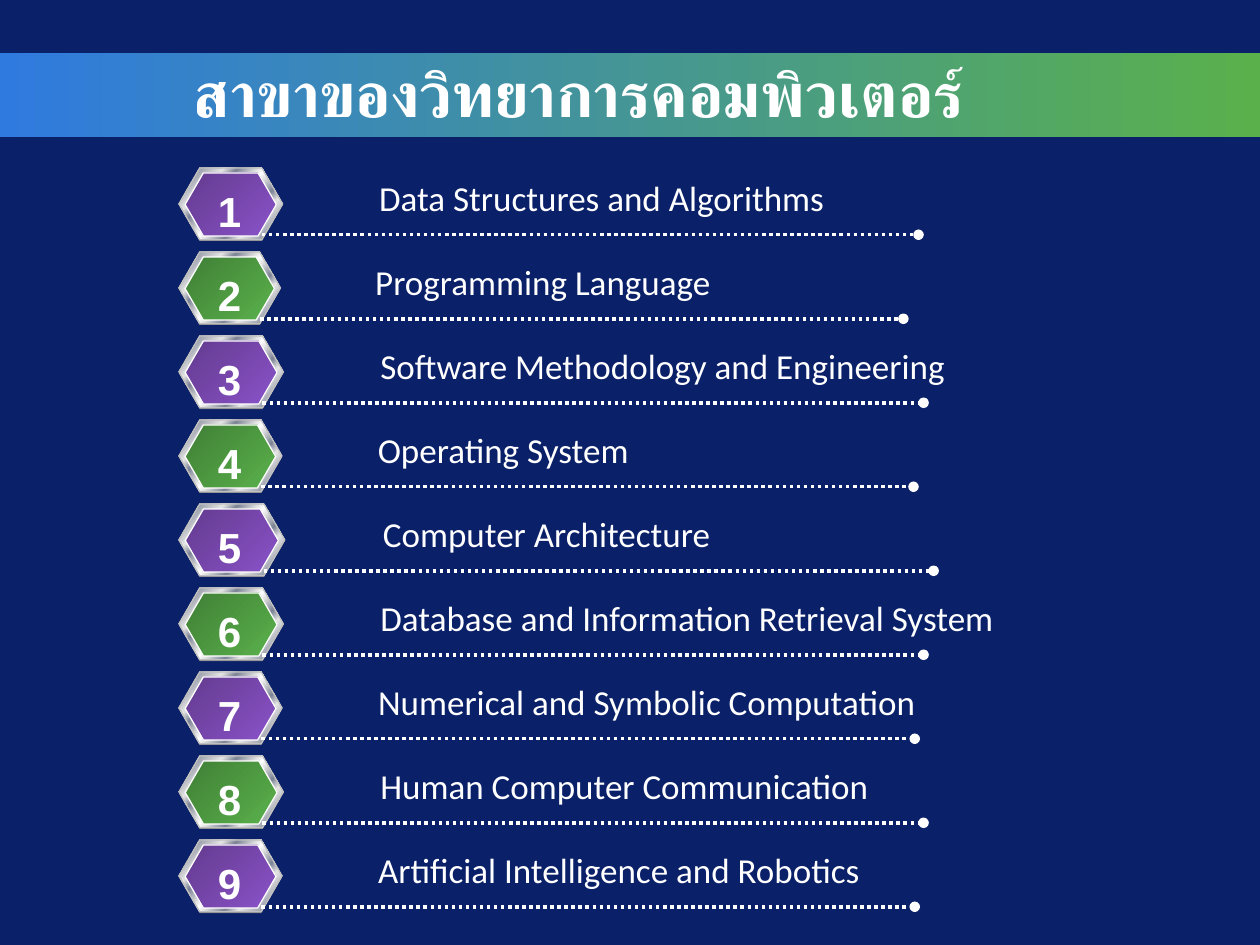
"""Build a slide listing nine branches of computer science."""
from lxml import etree
from pptx import Presentation
from pptx.dml.color import RGBColor
from pptx.enum.dml import MSO_LINE
from pptx.enum.shapes import MSO_CONNECTOR, MSO_SHAPE
from pptx.enum.text import MSO_ANCHOR, MSO_AUTO_SIZE, PP_ALIGN
from pptx.oxml.ns import qn
from pptx.util import Inches, Pt

DOTTED = MSO_LINE.ROUND_DOT
STRAIGHT = MSO_CONNECTOR.STRAIGHT
HEXAGON = MSO_SHAPE.HEXAGON
RECTANGLE = MSO_SHAPE.RECTANGLE
MIDDLE = MSO_ANCHOR.MIDDLE
TOP = MSO_ANCHOR.TOP
FIXED_SIZE = MSO_AUTO_SIZE.NONE
LEFT = PP_ALIGN.LEFT
CENTER = PP_ALIGN.CENTER
RIGHT = PP_ALIGN.RIGHT

WHITE = "FFFFFF"
PURPLE = [(0, "633B8F"), (100, "8A52C8")]
GREEN = [(0, "407F36"), (100, "5AB14B")]
BAR = [(0, "2F7ADF"), (100, "5AB14B")]
LIGHT, DARK = "E6E6E6", "7D8496"
METAL = [(0, LIGHT), (7, DARK), (26, LIGHT), (34, DARK), (46, LIGHT), (50, WHITE),
         (54, LIGHT), (66, DARK), (74, LIGHT), (93, DARK), (100, LIGHT)]

ROW_LEFT = 1.42
FIRST_TOP = 4 / 3
ROW_STEP = 2 / 3

# Each branch: name, right end of its dotted line, width of its label.
BRANCHES = [
    ("Data Structures and Algorithms", 7.29, 7),
    ("Programming Language", 7.17, 3.71),
    ("Software Methodology and Engineering", 7.33, 5.11),
    ("Operating System", 7.25, 2.41),
    ("Computer Architecture", 7.41, 2.99),
    ("Database and Information Retrieval System", 7.33, 5.62),
    ("Numerical and Symbolic Computation", 7.26, 4.89),
    ("Human Computer Communication", 7.33, 4.44),
    ("Artificial Intelligence and Robotics", 7.26, 4.4),
]


def color(value):
    """Return the colour for a hex string."""
    return RGBColor.from_string(value)


def fill_gradient(shape, stops, angle):
    """Fill a shape with a linear gradient turned clockwise by an angle."""
    shape.fill.gradient()
    shape.fill.gradient_angle = -angle % 360
    stop_list = shape._element.spPr.find(qn("a:gradFill")).find(qn("a:gsLst"))
    for stop in list(stop_list):
        stop_list.remove(stop)
    for position, value in stops:
        stop = etree.SubElement(stop_list, qn("a:gs"), pos=str(position * 1000))
        etree.SubElement(stop, qn("a:srgbClr"), val=value)


def add_shape(shapes, kind, left, top, width, height, fill, angle=0, line=None):
    """Add a preset shape with a solid or gradient fill."""
    shape = shapes.add_shape(kind, Inches(left), Inches(top), Inches(width), Inches(height))
    shape.shadow.inherit = False
    if isinstance(fill, str):
        shape.fill.solid()
        shape.fill.fore_color.rgb = color(fill)
    else:
        fill_gradient(shape, fill, angle)
    if line:
        shape.line.color.rgb = color(line)
        shape.line.width = Pt(0.75)
    else:
        shape.line.fill.background()
    if kind == HEXAGON:
        shape.adjustments[0] = 0.289
    return shape


def write_text(shape, text, size, font_name, bold, alignment, anchor):
    """Write one white run into a shape."""
    frame = shape.text_frame
    frame.word_wrap = True
    frame.auto_size = FIXED_SIZE
    frame.vertical_anchor = anchor
    paragraph = frame.paragraphs[0]
    paragraph.alignment = alignment
    run = paragraph.add_run()
    run.text = text
    run.font.size = Pt(size)
    run.font.name = font_name
    run.font.bold = bold
    run.font.color.rgb = color(WHITE)


def add_text(shapes, left, top, width, height, text, size, font_name, bold, alignment):
    """Add a text box holding one run."""
    box = shapes.add_textbox(Inches(left), Inches(top), Inches(width), Inches(height))
    write_text(box, text, size, font_name, bold, alignment, TOP)


def add_dotted_line(shapes, left, right, top):
    """Add a horizontal dotted line that ends in a dot."""
    connector = shapes.add_connector(
        STRAIGHT, Inches(left), Inches(top), Inches(right), Inches(top))
    connector.line.color.rgb = color(WHITE)
    connector.line.width = Pt(2)
    connector.line.dash_style = DOTTED
    etree.SubElement(connector.line._get_or_add_ln(), qn("a:tailEnd"), type="oval")
    etree.SubElement(connector._element.spPr, qn("a:effectLst"))


def add_branch(slide, number, name, line_end, label_width):
    """Add a numbered badge, its dotted line and its label as one group."""
    shapes = slide.shapes.add_group_shape().shapes
    top = FIRST_TOP + (number - 1) * ROW_STEP
    width = (line_end - ROW_LEFT) / 7.13
    face = PURPLE if number % 2 else GREEN
    add_shape(shapes, HEXAGON, ROW_LEFT, top + 0.01, width, 0.57, "808080")
    add_shape(shapes, HEXAGON, ROW_LEFT, top, width, 0.57, METAL, 45, "C0C0C0")
    add_shape(shapes, HEXAGON, ROW_LEFT + 0.06 * width, top + 0.04, 0.88 * width, 0.5,
              face, 45, WHITE)
    add_dotted_line(shapes, ROW_LEFT + 0.8 * width, line_end, top + 0.53)
    add_text(shapes, ROW_LEFT + 1.81 * width, top + 0.02, label_width, 0.44,
             name, 20, "Calibri", False, LEFT)
    add_text(shapes, 1.63, top + 0.09, 0.38, 0.41, str(number), 24, "Arial", True, CENTER)


def add_title(slide, text):
    """Place the title on a gradient bar across the slide."""
    bar = add_shape(slide.shapes, RECTANGLE, 0, 0.42, 10, 0.67, BAR)
    title = slide.shapes.title
    title._element.addprevious(bar._element)
    title.left, title.top = Inches(0.5), Inches(0.42)
    title.width, title.height = Inches(7.25), Inches(0.62)
    write_text(title, text, 36, "Calibri", True, RIGHT, MIDDLE)


def main():
    """Build and save the presentation."""
    presentation = Presentation()
    presentation.slide_width = Inches(10)
    presentation.slide_height = Inches(7.5)
    slide = presentation.slides.add_slide(presentation.slide_layouts[5])
    slide.background.fill.solid()
    slide.background.fill.fore_color.rgb = color("0A2068")
    add_title(slide, "สาขาของวิทยาการคอมพิวเตอร์")
    for number, (name, line_end, label_width) in enumerate(BRANCHES, 1):
        add_branch(slide, number, name, line_end, label_width)
    presentation.save("out.pptx")


if __name__ == "__main__":
    main()
